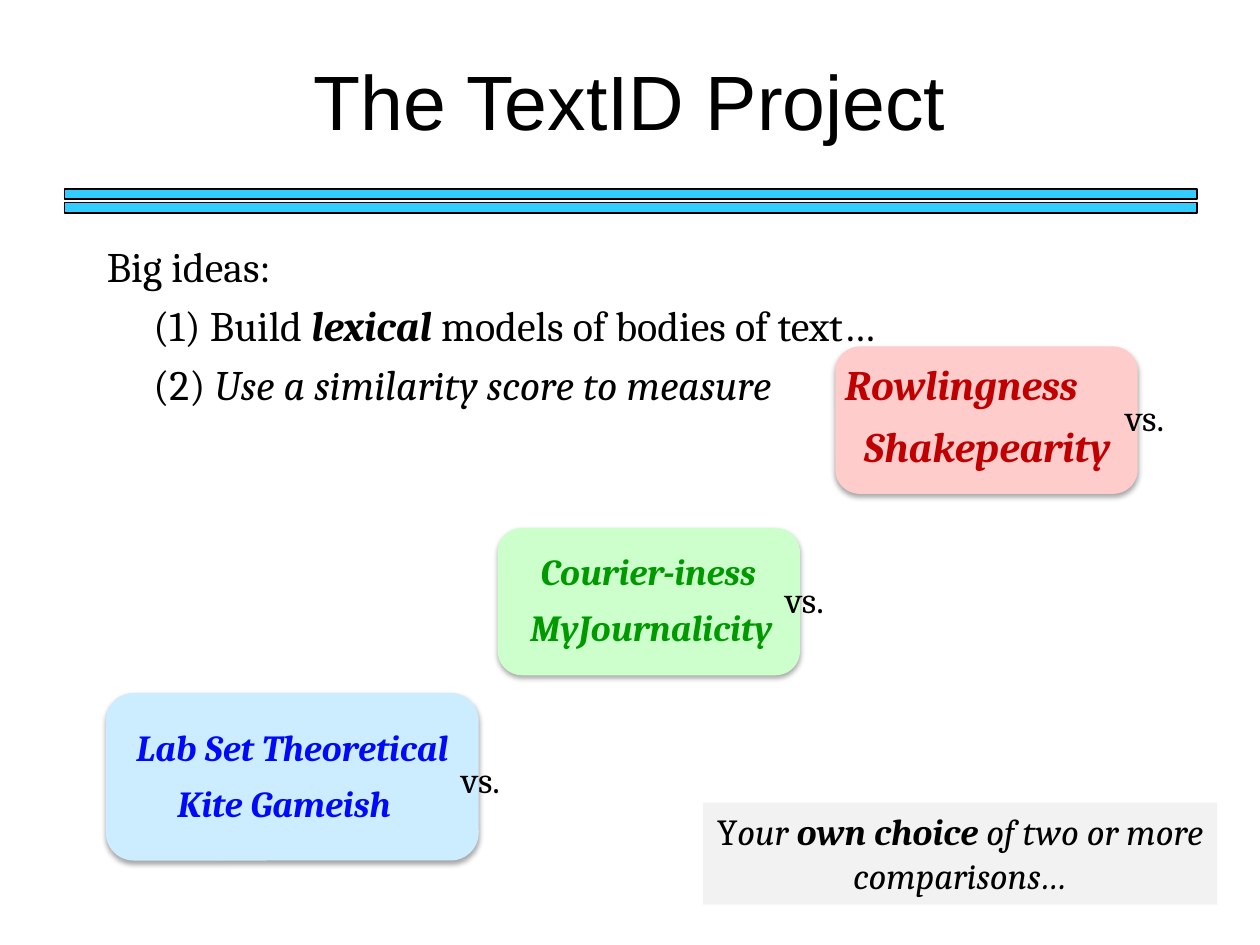
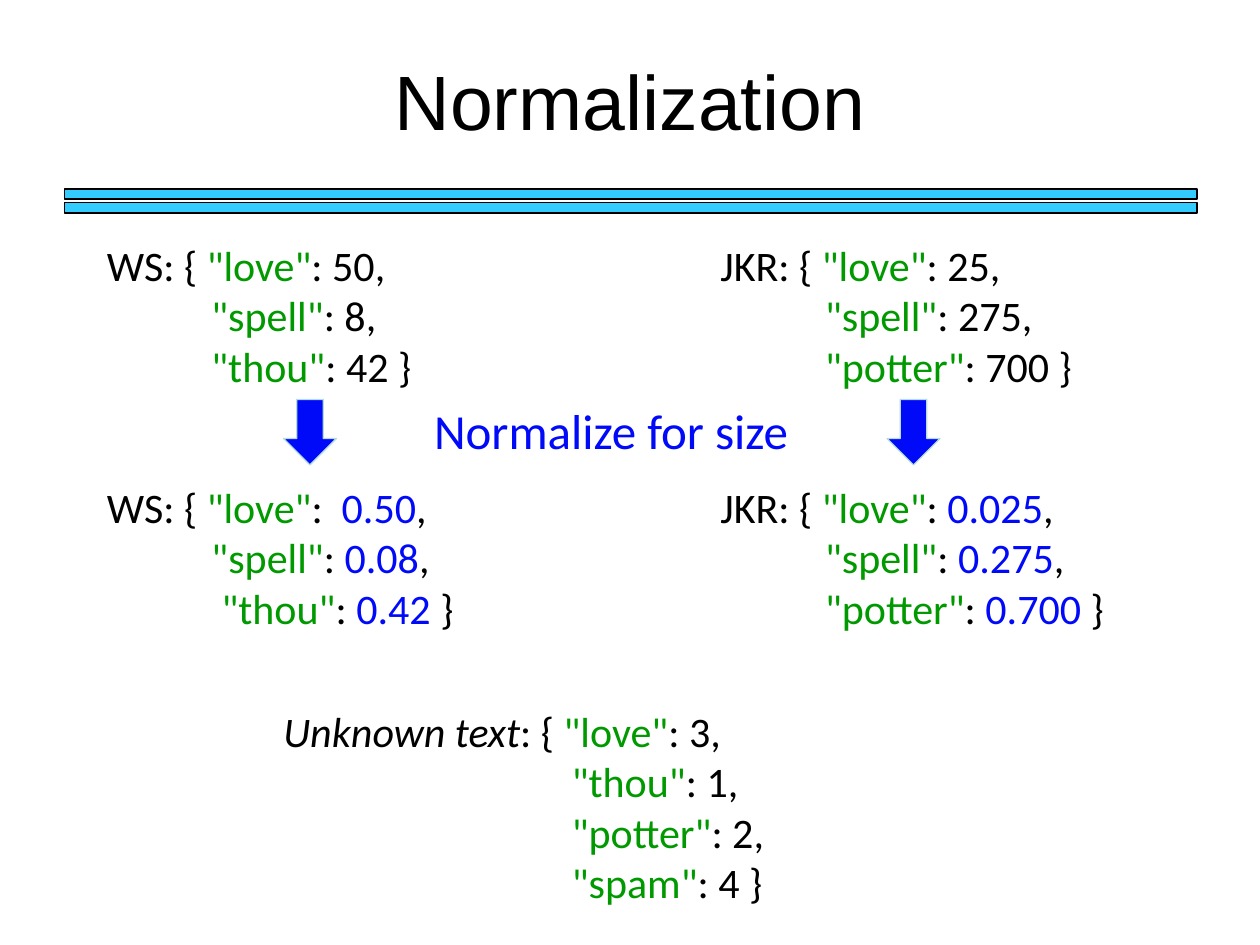
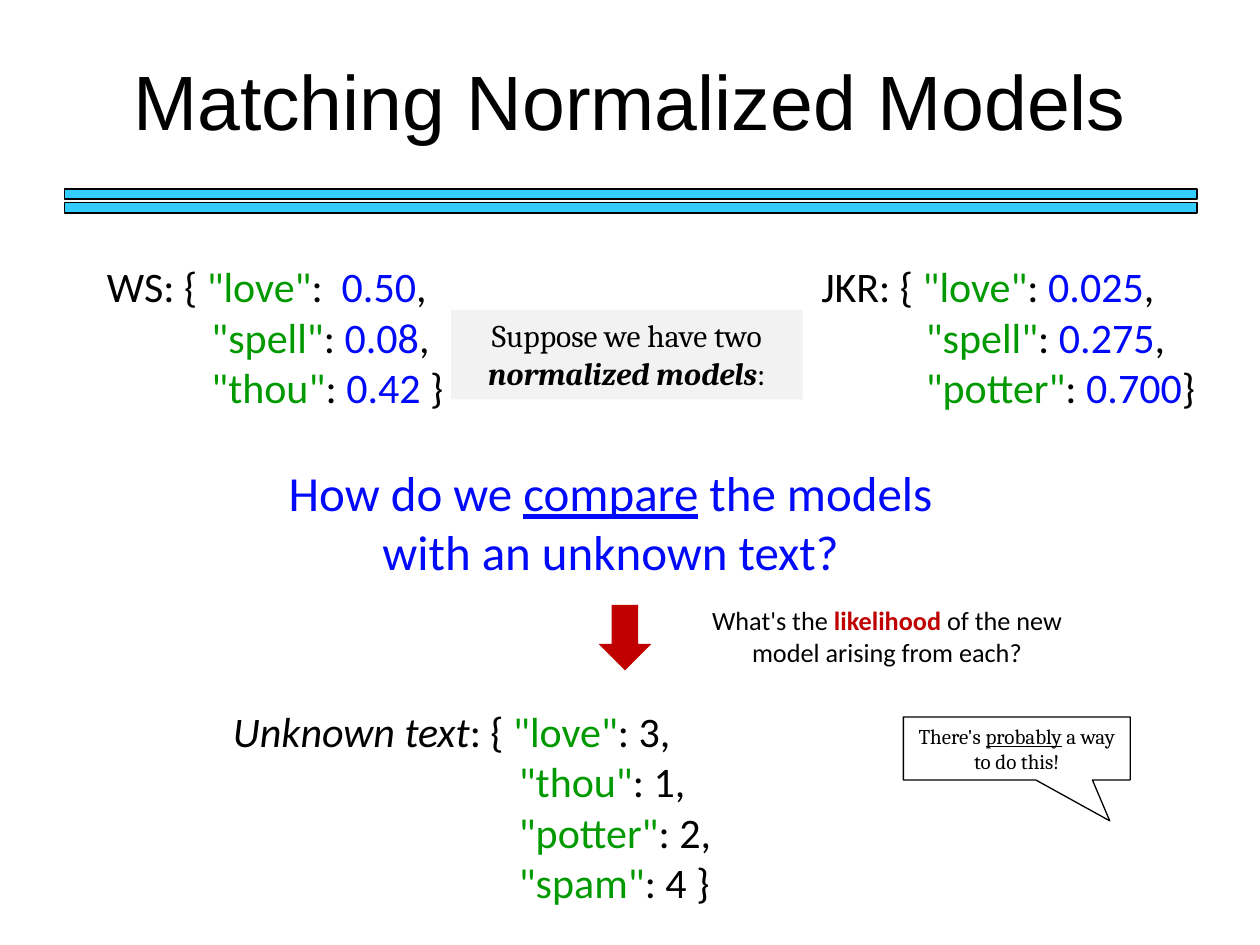
from dataclasses import dataclass
from typing import NamedTuple

from lxml import etree
from pptx import Presentation
from pptx.dml.color import RGBColor
from pptx.enum.shapes import MSO_SHAPE
from pptx.enum.text import MSO_ANCHOR, MSO_AUTO_SIZE, PP_ALIGN
from pptx.oxml.ns import qn
from pptx.util import Inches, Pt

RECTANGLE = MSO_SHAPE.RECTANGLE
ROUNDED = MSO_SHAPE.ROUNDED_RECTANGLE
DOWN_ARROW = MSO_SHAPE.DOWN_ARROW
CALLOUT = MSO_SHAPE.RECTANGULAR_CALLOUT
LEFT, CENTER = PP_ALIGN.LEFT, PP_ALIGN.CENTER
TOP, MIDDLE = MSO_ANCHOR.TOP, MSO_ANCHOR.MIDDLE
GROW = MSO_AUTO_SIZE.SHAPE_TO_FIT_TEXT

BLACK, WHITE = "000000", "FFFFFF"
BLUE, GREEN, RED = "000AF9", "009900", "C00000"
BAND, PALE_GRAY, ARROW_EDGE = "33CCFF", "F2F2F2", "B6DCDF"
TITLE_FONT, SANS, SERIF = "Arial", "Calibri", "Cambria"
TITLE_LAYOUT = 5
WORD_INDENT = 0.83
UNKNOWN_INDENT = 2.27


class Area(NamedTuple):
    left: float
    top: float
    width: float
    height: float


class Span(NamedTuple):
    text: str
    color: str = BLACK
    bold: bool = False
    italic: bool = False
    underline: bool = False


@dataclass(frozen=True)
class Para:
    spans: tuple[Span, ...]
    indent: float = 0
    before: float = 0


class Entry(NamedTuple):
    word: str
    value: str
    colon: str = ": "
    shift: float = 0


@dataclass(frozen=True)
class Model:
    label: Span
    entries: tuple[Entry, ...]
    value_color: str = BLACK
    indent: float = WORD_INDENT
    closing: str = " }"


@dataclass(frozen=True)
class Card:
    area: Area
    fill: str
    color: str
    size: int
    names: tuple[tuple[str, Area], ...]
    versus: Area


TITLE_AREA = Area(0.75, 0.17, 8.5, 1.25)
CARDS = (
    Card(Area(0.84, 5.5, 2.96, 1.33), "CCECFF", BLUE, 21,
         (("Lab Set Theoretical", Area(0.83, 5.7, 2.98, 0.45)),
          ("Kite Gameish", Area(1.18, 6.15, 2.15, 0.45))),
         Area(3.55, 5.96, 0.53, 0.45)),
    Card(Area(3.95, 4.19, 2.4, 1.17), "CCFFCC", GREEN, 21,
         (("Courier-iness", Area(4.08, 4.31, 2.13, 0.45)),
          ("MyJournalicity", Area(4.08, 4.75, 2.18, 0.45))),
         Area(6.12, 4.53, 0.53, 0.45)),
    Card(Area(6.63, 2.75, 2.4, 1.17), "FFCCCC", RED, 24,
         (("Rowlingness", Area(6.6, 2.8, 2.06, 0.5)),
          ("Shakepearity", Area(6.73, 3.29, 2.21, 0.5))),
         Area(8.82, 3.08, 0.53, 0.45)),
)
WS, JKR = Span("WS: { "), Span("JKR: { ")
UNKNOWN_ENTRIES = (("love", "3"), ("thou", "1"), ("potter", "2"), ("spam", "4"))
JKR_SHARES = (Entry("love", "0.025"), Entry("spell", "0.275"), Entry("potter", "0.700"))


def rgb(color: str) -> RGBColor:
    return RGBColor.from_string(color)


def lengths(area: Area) -> list:
    return [Inches(value) for value in area]


def add_paras(frame, paras, font: str, size: float, align=LEFT) -> None:
    for number, item in enumerate(paras):
        para = frame.add_paragraph() if number else frame.paragraphs[0]
        para.alignment = align
        para.space_before = Pt(item.before)
        if item.indent:
            para._p.get_or_add_pPr().set("marL", str(Inches(item.indent)))
        for span in item.spans:
            run = para.add_run()
            run.text = span.text
            run.font.name = font
            run.font.size = Pt(size)
            run.font.color.rgb = rgb(span.color)
            run.font.bold = span.bold
            run.font.italic = span.italic
            run.font.underline = span.underline


def add_text(page, area: Area, paras, font: str, size: float, align=LEFT,
             fill: str = "", wrap: bool = True) -> None:
    box = page.shapes.add_textbox(*lengths(area))
    box.text_frame.word_wrap = wrap
    if not wrap:
        box.text_frame.auto_size = GROW
    if fill:
        box.fill.solid()
        box.fill.fore_color.rgb = rgb(fill)
    add_paras(box.text_frame, paras, font, size, align)


def add_centered(page, area: Area, spans, font: str, size: float,
                 fill: str = "", wrap: bool = True) -> None:
    add_text(page, area, (Para(tuple(spans)),), font, size, CENTER, fill, wrap)


def add_figure(page, kind, area: Area, fill: str = "", line: str = ""):
    figure = page.shapes.add_shape(kind, *lengths(area))
    figure.shadow.inherit = False
    if fill:
        figure.fill.solid()
        figure.fill.fore_color.rgb = rgb(fill)
    else:
        figure.fill.background()
    if line:
        figure.line.color.rgb = rgb(line)
        figure.line.width = Pt(0.75)
    else:
        figure.line.fill.background()
    return figure


def add_soft_shadow(figure) -> None:
    effects = figure._element.spPr.find(qn("a:effectLst"))
    shadow = etree.SubElement(effects, qn("a:outerShdw"), blurRad=str(Pt(3.1)),
                              dist=str(Pt(1.8)), dir="5400000", rotWithShape="0")
    color = etree.SubElement(shadow, qn("a:srgbClr"), val=BLACK)
    etree.SubElement(color, qn("a:alpha"), val="35000")


def add_arrow(page, left: float, top: float, fill: str, line: str = "") -> None:
    add_figure(page, DOWN_ARROW, Area(left, top, 0.42, 0.52), fill, line)


def add_model(page, area: Area, model: Model) -> None:
    paras = []
    last = len(model.entries) - 1
    for number, entry in enumerate(model.entries):
        label = () if number else (model.label,)
        if number == 0 and model.label.italic:
            label += (Span(": { "),)
        paras.append(Para(
            label + (Span(f'"{entry.word}"', GREEN), Span(entry.colon),
                     Span(entry.value, model.value_color),
                     Span(model.closing if number == last else ",")),
            model.indent + entry.shift if number else 0))
    add_text(page, area, paras, SANS, 24)


def add_ws_shares(page, top: float, last_shift: float = 0) -> None:
    entries = (Entry("love", "0.50", ":  "), Entry("spell", "0.08"),
               Entry("thou", "0.42", shift=last_shift))
    add_model(page, Area(0.75, top, 3.08, 1.31), Model(WS, entries, BLUE))


def add_unknown(page, left: float, shift: float = 0) -> None:
    entries = tuple(Entry(word, count, shift=shift) for word, count in UNKNOWN_ENTRIES)
    add_model(page, Area(left, 5.55, 4.62, 1.72),
              Model(Span("Unknown text", italic=True), entries, indent=UNKNOWN_INDENT))


def add_page(deck, title: str):
    page = deck.slides.add_slide(deck.slide_layouts[TITLE_LAYOUT])
    heading = page.shapes.title
    heading.left, heading.top, heading.width, heading.height = lengths(TITLE_AREA)
    heading.text_frame.vertical_anchor = MIDDLE
    add_paras(heading.text_frame, (Para((Span(title),)),), TITLE_FONT, 44, CENTER)
    for top in (1.5, 1.61):
        add_figure(page, RECTANGLE, Area(0.51, top, 8.99, 0.08), BAND, BLACK)
    return page


def build_project(deck) -> None:
    page = add_page(deck, "The TextID Project")
    for card in CARDS:
        add_soft_shadow(add_figure(page, ROUNDED, card.area, card.fill))
    ideas = (
        Para((Span("Big ideas:"),)),
        Para((Span("(1) Build "), Span("lexical ", bold=True, italic=True),
              Span("models of bodies of text…")), 0.37, 5),
        Para((Span("(2) "), Span("Use a similarity score to measure", italic=True)),
             0.37, 5),
    )
    add_text(page, Area(0.75, 1.86, 8.26, 1.47), ideas, SERIF, 24)
    for card in CARDS:
        for name, area in card.names:
            add_centered(page, area, [Span(name, card.color, True, True)],
                         SERIF, card.size, wrap=False)
        add_centered(page, card.versus, [Span("vs.")], SERIF, 21, wrap=False)
    choice = (Span("Y"), Span("our", italic=True),
              Span(" own choice", bold=True, italic=True),
              Span(" of two or more comparisons…", italic=True))
    add_centered(page, Area(5.58, 6.37, 4.08, 0.81), choice, SERIF, 21, PALE_GRAY)


def build_normalization(deck) -> None:
    page = add_page(deck, "Normalization")
    add_model(page, Area(0.75, 1.85, 2.83, 1.31), Model(
        WS, (Entry("love", "50"), Entry("spell", "8"), Entry("thou", "42"))))
    add_model(page, Area(5.62, 1.85, 3.67, 1.31), Model(
        JKR, (Entry("love", "25"), Entry("spell", "275"), Entry("potter", "700"))))
    for left in (2.25, 7.04):
        add_arrow(page, left, 3.17, BLUE, ARROW_EDGE)
    add_centered(page, Area(2.6, 3.13, 4.5, 0.57),
                 [Span("Normalize for size", BLUE)], SANS, 28)
    add_ws_shares(page, 3.77, 0.08)
    add_model(page, Area(5.62, 3.77, 3.67, 1.31), Model(JKR, JKR_SHARES, BLUE))
    add_unknown(page, 2.15, 0.02)


def build_matching(deck) -> None:
    page = add_page(deck, "Matching Normalized Models")
    add_unknown(page, 1.75)
    add_ws_shares(page, 2.02)
    add_model(page, Area(6.42, 2.02, 3.17, 1.31),
              Model(JKR, JKR_SHARES, BLUE, closing="}"))
    question = (Span("How do we ", BLUE), Span("compare", BLUE, underline=True),
                Span(" the models with an unknown text?", BLUE))
    add_centered(page, Area(2.07, 3.62, 5.55, 1.04), question, SANS, 28)
    add_arrow(page, 4.75, 4.8, RED)
    likelihood = (Span("What's the "), Span("likelihood ", RED, bold=True),
                  Span("of the new model arising from each?"))
    add_centered(page, Area(5.29, 4.75, 3.5, 0.61), likelihood, SANS, 15)
    premise = (Span("Suppose we have two "),
               Span("normalized models", bold=True, italic=True), Span(":"))
    add_centered(page, Area(3.58, 2.46, 2.79, 0.71), premise, SERIF, 18, PALE_GRAY)
    callout = add_figure(page, CALLOUT, Area(7.17, 5.69, 1.8, 0.5), line=BLACK)
    callout.adjustments[0] = 0.41
    callout.adjustments[1] = 1.15
    callout.text_frame.word_wrap = True
    callout.text_frame.vertical_anchor = TOP
    hint = (Span("There's "), Span("probably", underline=True), Span(" a way to do this!"))
    add_paras(callout.text_frame, (Para(hint),), SERIF, 12, CENTER)


def main() -> None:
    deck = Presentation()
    deck.slide_width, deck.slide_height = Inches(10), Inches(7.5)
    background = deck.slide_master.background.fill
    background.solid()
    background.fore_color.rgb = rgb(WHITE)
    build_project(deck)
    build_normalization(deck)
    build_matching(deck)
    deck.save("out.pptx")


if __name__ == "__main__":
    main()
